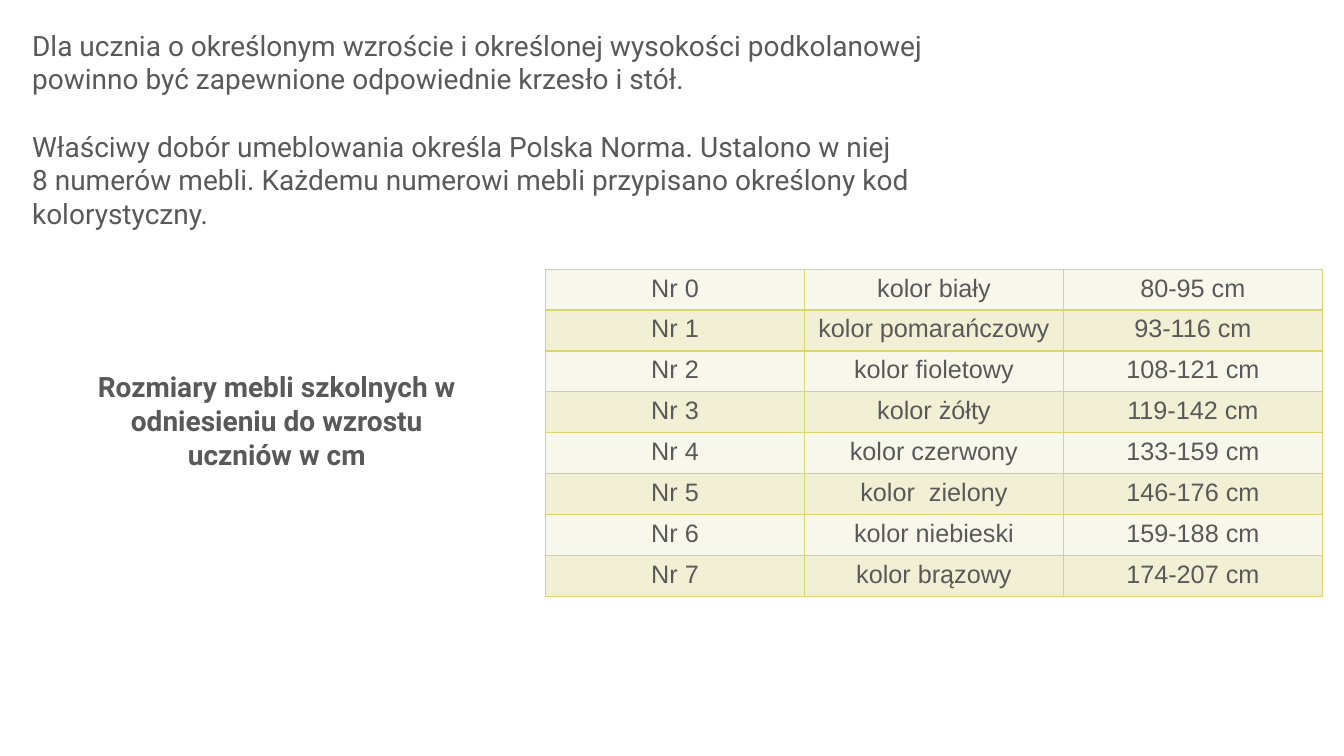
from lxml.etree import SubElement
from pptx import Presentation
from pptx.dml.color import RGBColor
from pptx.enum.text import PP_ALIGN as Align
from pptx.oxml.ns import qn
from pptx.util import Inches, Pt


def color(hex_code):
    return RGBColor.from_string(hex_code)


class SlideBuilder:
    """Draws on one page; lengths are percentages of its width and height."""
    INK = "595959"
    BORDER = "D9D66D"
    BANDS = ("F8F7EB", "F1F0D4")

    def __init__(self, deck):
        self.deck = deck
        self.page = deck.slides.add_slide(deck.slide_layouts[6])

    def area(self, left, top, width, height):
        wide, high = self.deck.slide_width, self.deck.slide_height
        return [int(share * full / 100) for share, full in
                zip((left, top, width, height), (wide, high, wide, high))]

    def add_spans(self, para, text, font, size, bold=False, align=Align.LEFT):
        para.alignment = align
        for number, line in enumerate(text.split("\n")):
            if number:
                para.add_line_break()
            span = para.add_run()
            span.text = line
            span.font.name, span.font.size, span.font.bold = font, Pt(size), bold
            span.font.color.rgb = color(self.INK)

    def add_text(self, place, paragraphs, gap=24, **style):
        frame = self.page.shapes.add_textbox(*self.area(*place)).text_frame
        frame.word_wrap = True
        for number, text in enumerate(paragraphs):
            para = frame.add_paragraph() if number else frame.paragraphs[0]
            if number:
                para.space_before = Pt(gap)
            self.add_spans(para, text, "Roboto", 20, **style)

    def add_border(self, cell):
        properties = cell._tc.get_or_add_tcPr()
        for side in ("lnL", "lnR", "lnT", "lnB"):
            line = SubElement(properties, qn(f"a:{side}"), w=str(Pt(1)))
            fill = SubElement(line, qn("a:solidFill"))
            SubElement(fill, qn("a:srgbClr"), val=self.BORDER)

    def add_table(self, place, rows):
        left, top, width, height = self.area(*place)
        grid = self.page.shapes.add_table(
            len(rows), len(rows[0]), left, top, width, height).table
        for row, texts in enumerate(rows):
            for column, text in enumerate(texts):
                cell = grid.cell(row, column)
                self.add_border(cell)
                cell.fill.solid()
                cell.fill.fore_color.rgb = color(self.BANDS[row % 2])
                self.add_spans(cell.text_frame.paragraphs[0], text, "Arial", 18,
                               align=Align.CENTER)


def main():
    deck = Presentation()
    deck.slide_width, deck.slide_height = Inches(13.33), Inches(7.5)
    slide = SlideBuilder(deck)

    # Introduction
    slide.add_text((1.65, 3.07, 74.57, 28.27), [
        "Dla ucznia o określonym wzroście i określonej wysokości podkolanowej "
        "powinno być zapewnione odpowiednie krzesło i stół.",
        "Właściwy dobór umeblowania określa Polska Norma. Ustalono w niej\n"
        "8 numerów mebli. Każdemu numerowi mebli przypisano określony kod "
        "kolorystyczny.",
    ])

    # Table caption
    slide.add_text(
        (6.38, 48.27, 28.43, 14.8),
        ["Rozmiary mebli szkolnych w odniesieniu do wzrostu uczniów w cm"],
        bold=True, align=Align.CENTER)

    # Furniture sizes
    sizes = [
        ("kolor biały", "80-95"),
        ("kolor pomarańczowy", "93-116"),
        ("kolor fioletowy", "108-121"),
        ("kolor żółty", "119-142"),
        ("kolor czerwony", "133-159"),
        ("kolor  zielony", "146-176"),
        ("kolor niebieski", "159-188"),
        ("kolor brązowy", "174-207"),
    ]
    slide.add_table((40.59, 35.6, 57.8, 43.3),
                    [(f"Nr {number}", shade, f"{height} cm")
                     for number, (shade, height) in enumerate(sizes)])

    deck.save("out.pptx")


if __name__ == "__main__":
    main()
